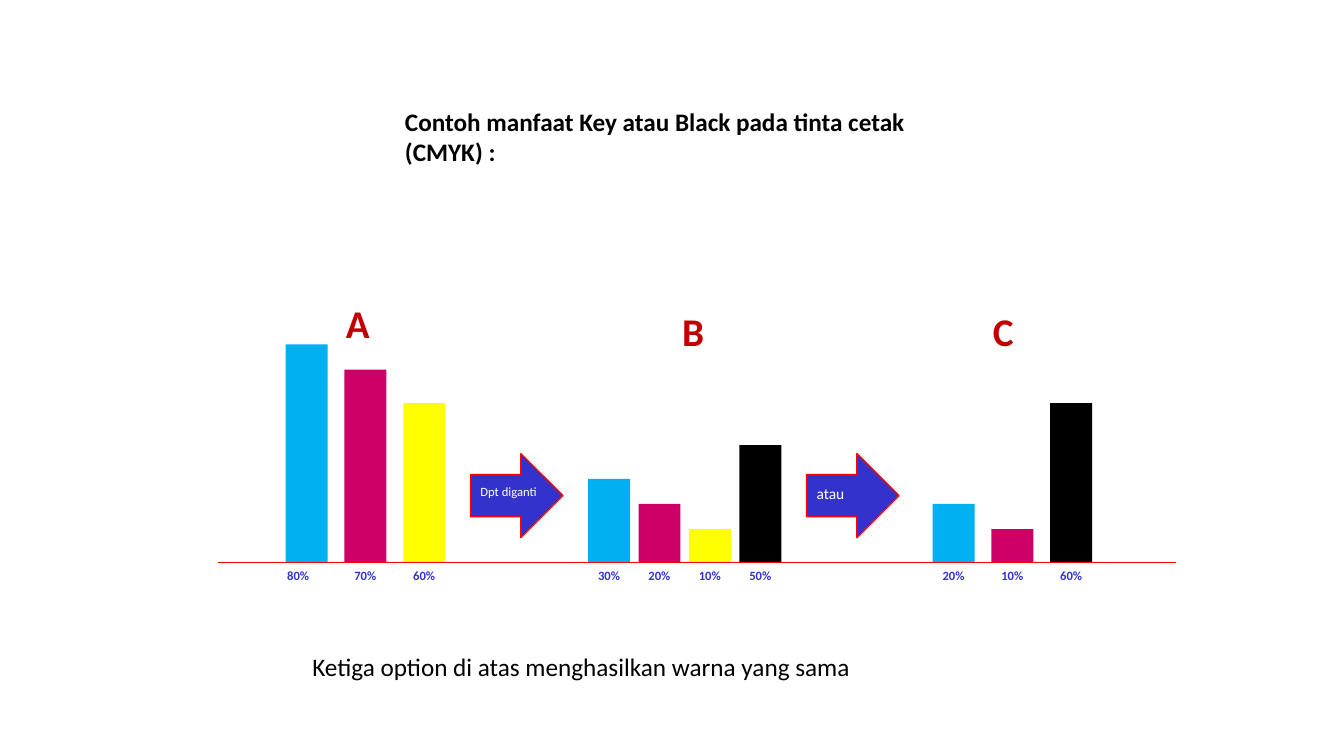
from dataclasses import dataclass
from lxml.etree import SubElement
from pptx import Presentation
from pptx.dml.color import RGBColor
from pptx.enum.shapes import MSO_CONNECTOR as Link, MSO_SHAPE as Kind
from pptx.enum.text import MSO_ANCHOR as Anchor, MSO_AUTO_SIZE as Fit, PP_ALIGN as Align
from pptx.oxml.ns import qn
from pptx.util import Inches, Pt

TITLE = "Contoh manfaat Key atau Black pada tinta cetak (CMYK) :"
CLOSING = "Ketiga option di atas menghasilkan warna yang sama"

# Places are in grid steps, twelve to the inch.
# letter, its place, first bar's column, bar pitch, ink percentages
GROUPS = [
    ("A", (40, 35), 34, 7, {"C": 80, "M": 70, "Y": 60}),
    ("B", (80, 36), 70, 6, {"C": 30, "M": 20, "Y": 10, "K": 50}),
    ("C", (117, 36), 111, 7, {"C": 20, "M": 10, "K": 60}),
]
RISE = {80: 26, 70: 23, 60: 19, 50: 14, 30: 10, 20: 7, 10: 4}
SHIFT = {80: -1}  # the widest bar's label sits one step to the left
# text, column, text width, text height, type size
ARROWS = [("Dpt diganti", 56, 9.25, 3, 9), ("atau", 96, 5.75, 3.5, 11)]
BASE, BAR = 67, 5


@dataclass(frozen=True)
class Theme:
    font: str = "Calibri"
    ink: str = "000000"
    letter: str = "C00000"
    accent: str = "3333CC"
    edge: str = "FF0000"
    light: str = "FFFFFF"
    body: int = 18
    head: int = 28
    label: int = 9


LOOK = Theme()
INKS = {"C": "00B0F0", "M": "CC0066", "Y": "FFFF00", "K": "000000"}


def rgb(code):
    return RGBColor.from_string(code)


def steps(*counts):
    return [Inches(n / 12) for n in counts]


def style(frame, text, size, color, bold=False, wrap=False):
    frame.text = text
    frame.word_wrap = wrap
    frame.auto_size = Fit.NONE
    frame.vertical_anchor = Anchor.TOP
    para = frame.paragraphs[0]
    para.alignment = Align.LEFT
    font = para.font
    font.name, font.size, font.bold = LOOK.font, Pt(size), bold
    font.color.rgb = rgb(color)


def write(slide, place, *args, **more):
    box = slide.shapes.add_textbox(*steps(*place))
    style(box.text_frame, *args, **more)


def draw(slide, kind, place, fill, edge=None):
    shape = slide.shapes.add_shape(kind, *steps(*place))
    shape.shadow.inherit = False
    shape.fill.solid()
    shape.fill.fore_color.rgb = rgb(fill)
    if edge:
        shape.line.color.rgb = rgb(edge)
        shape.line.width = Pt(1)
    else:
        shape.line.fill.background()


def add_group(slide, letter, place, start, pitch, inks):
    for i, (ink, share) in enumerate(inks.items()):
        left, tall = start + i * pitch, RISE[share]
        draw(slide, Kind.RECTANGLE, (left, BASE - tall, BAR, tall), INKS[ink])
        write(slide, (left + SHIFT.get(share, 0), BASE, BAR, 3),
              f"{share}%", LOOK.label, LOOK.accent, bold=True)
    write(slide, (*place, 5, 6.86), letter, LOOK.head, LOOK.letter, bold=True)


def add_arrow(slide, text, left, wide, tall, size):
    draw(slide, Kind.RIGHT_ARROW, (left, 54, 11, 10), LOOK.accent, LOOK.edge)
    write(slide, (left, 57, wide, tall), text, size, LOOK.light)


def add_baseline(slide):
    line = slide.shapes.add_connector(Link.STRAIGHT, *steps(26, BASE, 140, BASE))
    line.line.color.rgb = rgb(LOOK.edge)
    line.line.width = Pt(0.5)
    SubElement(line._element.spPr, qn("a:effectLst"))


def main():
    deck = Presentation()
    deck.slide_width, deck.slide_height = Inches(13.33), Inches(7.5)
    slide = deck.slides.add_slide(deck.slide_layouts[5])
    title = slide.shapes.title
    title.left, title.top, title.width, title.height = steps(47, 12, 66, 8.5)
    style(title.text_frame, TITLE, LOOK.body, LOOK.ink, bold=True, wrap=True)
    for group in GROUPS:
        add_group(slide, *group)
    for arrow in ARROWS:
        add_arrow(slide, *arrow)
    write(slide, (36, 77, 67.2, 4.8), CLOSING, LOOK.body, LOOK.ink)
    add_baseline(slide)
    deck.save("out.pptx")


if __name__ == "__main__":
    main()
